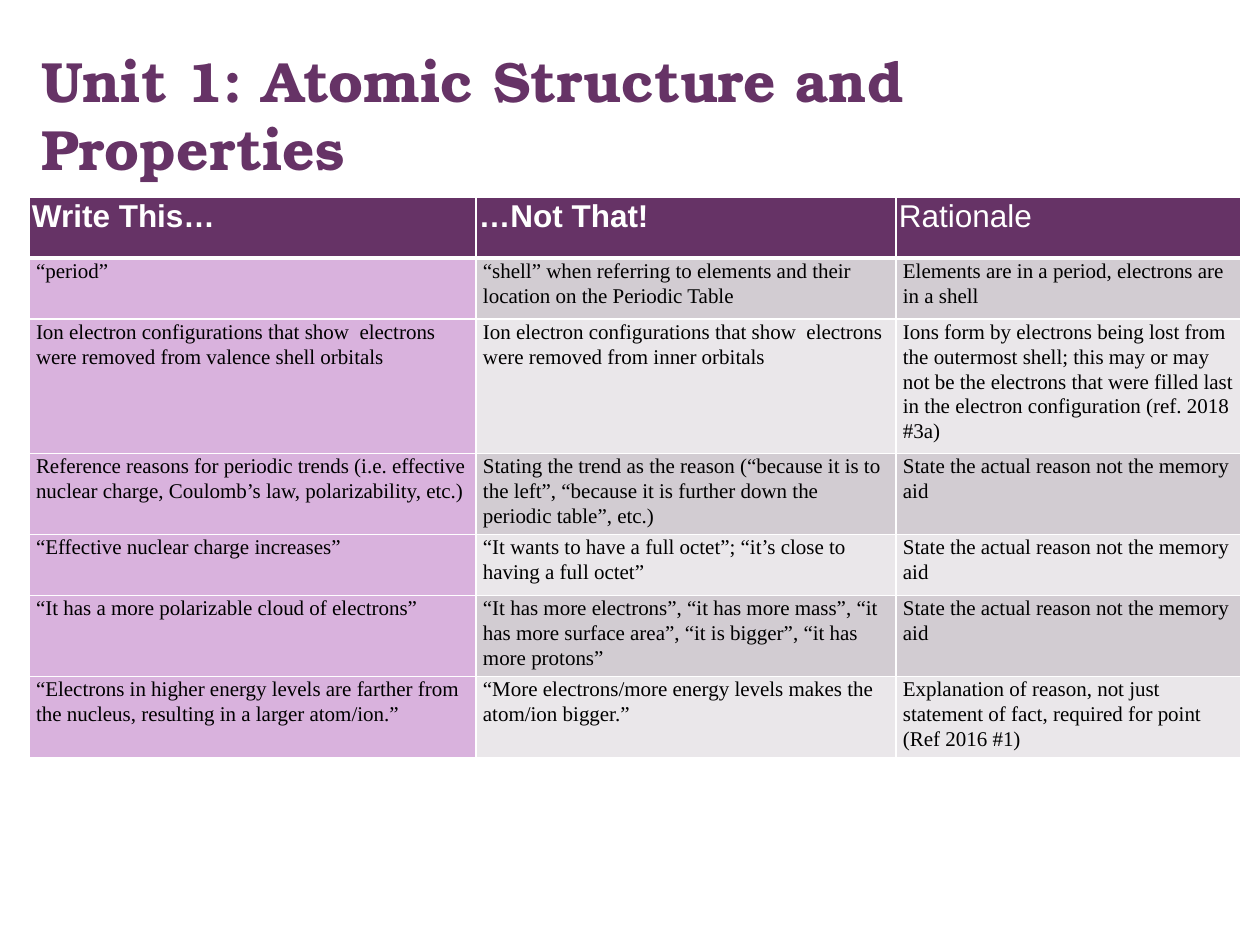
from lxml import etree
from pptx import Presentation
from pptx import util as u
from pptx.dml.color import RGBColor
from pptx.enum import text
from pptx.oxml.ns import qn

# Content
TITLE = "Unit 1: Atomic Structure and Properties"
HEADER = ("Write This…", "…Not That!", "Rationale")
AID = "State the actual reason not the memory aid"
ROWS = [
    ("“period”",
     "“shell” when referring to elements and their location on the Periodic Table",
     "Elements are in a period, electrons are in a shell"),
    ("Ion electron configurations that show  electrons were removed from valence shell orbitals",
     "Ion electron configurations that show  electrons were removed from inner orbitals",
     "Ions form by electrons being lost from the outermost shell; this may or may not be "
     "the electrons that were filled last in the electron configuration (ref. 2018 #3a)"),
    ("Reference reasons for periodic trends (i.e. effective nuclear charge, Coulomb’s law, "
     "polarizability, etc.)",
     "Stating the trend as the reason (“because it is to the left”, “because it is further "
     "down the periodic table”, etc.)",
     AID),
    ("“Effective nuclear charge increases”",
     "“It wants to have a full octet”; “it’s close to having a full octet”",
     AID),
    ("“It has a more polarizable cloud of electrons”",
     "“It has more electrons”, “it has more mass”, “it has more surface area”, "
     "“it is bigger”, “it has more protons”",
     AID),
    ("“Electrons in higher energy levels are farther from the nucleus, resulting in a "
     "larger atom/ion.”",
     "“More electrons/more energy levels makes the atom/ion bigger.”",
     "Explanation of reason, not just statement of fact, required for point\n(Ref 2016 #1)"),
]
COLORS = {"purple": "663366", "lilac": "D9B2DD", "dark_band": "D2CCD2",
          "light_band": "EAE7EA", "white": "FFFFFF", "black": "000000"}

# Layout in px, 126 to the inch
PX = 914400 / 126
TITLE_BOX = (29, 40, 960, 83)
TABLE_LEFT, TABLE_TOP = 29, 197
COLUMN_WIDTHS = (447, 420, 345)
ROW_HEIGHTS = (61, 61, 125, 81, 61, 81, 74)


def px(value):
    return u.Emu(round(value * PX))


def color(name):
    return RGBColor.from_string(COLORS[name])


def style_text(frame, font, size, color_name, bold, spacing=None):
    for paragraph in frame.paragraphs:
        paragraph.alignment = text.PP_ALIGN.LEFT
        paragraph.line_spacing = spacing
        for run in paragraph.runs:
            run.font.name = font
            run.font.size = u.Pt(size)
            run.font.bold = bold
            run.font.color.rgb = color(color_name)


def set_borders(cell, bottom):
    properties = cell._tc.get_or_add_tcPr()
    widths = {"a:lnL": 1, "a:lnR": 1, "a:lnT": 1, "a:lnB": bottom}
    for position, (tag, width) in enumerate(widths.items()):
        line = etree.Element(qn(tag), w=str(u.Pt(width)))
        fill = etree.SubElement(line, qn("a:solidFill"))
        etree.SubElement(fill, qn("a:srgbClr"), val=COLORS["white"])
        properties.insert(position, line)


def fill_cell(cell, words, row, column):
    is_header = row == 0
    if is_header:
        fill = "purple"
    elif column == 0:
        fill = "lilac"
    else:
        fill = "dark_band" if row % 2 else "light_band"
    cell.fill.solid()
    cell.fill.fore_color.rgb = color(fill)
    cell.margin_left = cell.margin_right = px(3 if is_header else 7)
    cell.margin_top = cell.margin_bottom = 0
    cell.text_frame.text = words
    if is_header:
        style_text(cell.text_frame, "Arial", 18, "white", column < 2, 1.07)
    else:
        style_text(cell.text_frame, "Times New Roman", 12, "black", False, 1.07)
    set_borders(cell, bottom=3 if is_header else 1)


presentation = Presentation()
presentation.slide_width, presentation.slide_height = px(1260), px(945)
slide = presentation.slides.add_slide(presentation.slide_layouts[6])

# Title
title = slide.shapes.add_textbox(*map(px, TITLE_BOX)).text_frame
title.word_wrap = True
title.text = TITLE
style_text(title, "TeX Gyre Bonum", 32.4, "purple", True)

# Table
table = slide.shapes.add_table(
    len(ROW_HEIGHTS), len(COLUMN_WIDTHS), px(TABLE_LEFT), px(TABLE_TOP),
    px(sum(COLUMN_WIDTHS)), px(sum(ROW_HEIGHTS))).table
for column, width in zip(table.columns, COLUMN_WIDTHS):
    column.width = px(width)
for table_row, height in zip(table.rows, ROW_HEIGHTS):
    table_row.height = px(height)
for row, entries in enumerate([HEADER, *ROWS]):
    for column, words in enumerate(entries):
        fill_cell(table.cell(row, column), words, row, column)

presentation.save("out.pptx")
